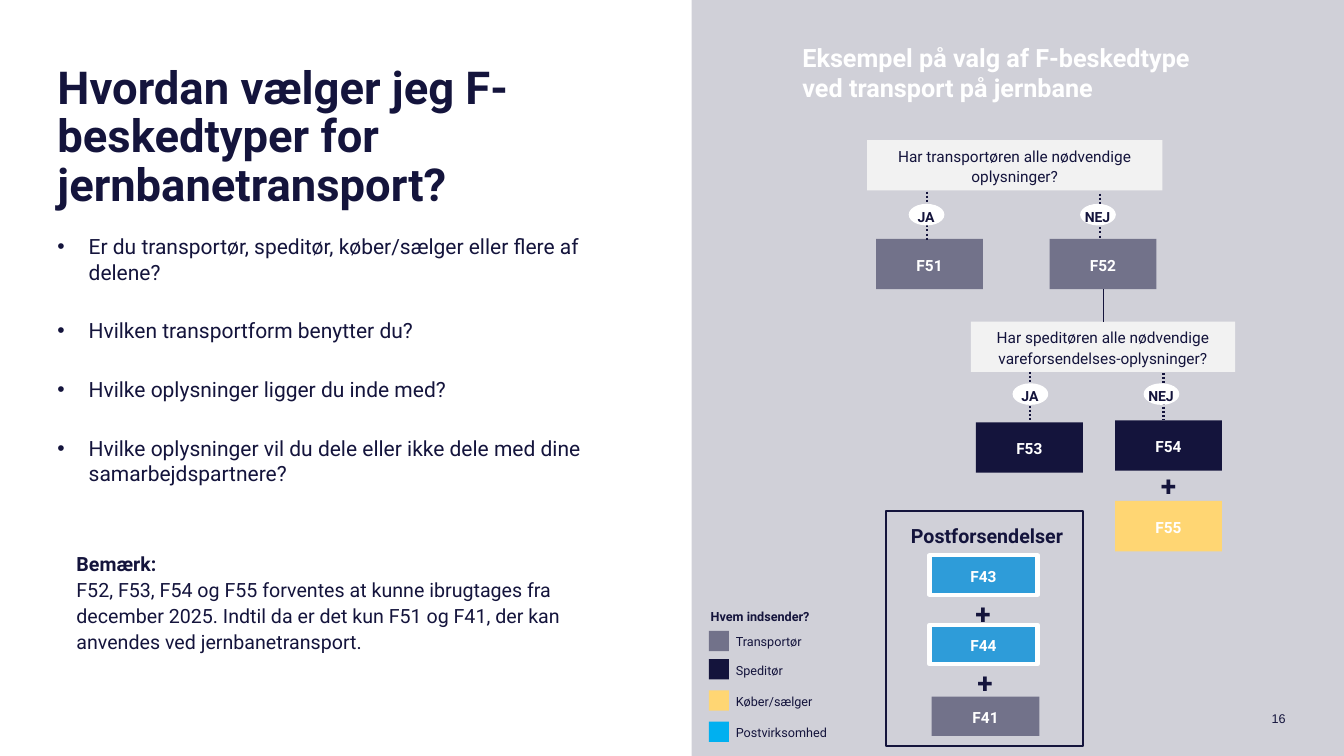
from pptx import Presentation
from pptx.util import Inches, Pt
from pptx.dml.color import RGBColor
from pptx.enum.dml import MSO_LINE
from pptx.enum.shapes import MSO_CONNECTOR, MSO_SHAPE
from pptx.enum.text import MSO_ANCHOR, PP_ALIGN
from lxml import etree

RECT, OVAL = MSO_SHAPE.RECTANGLE, MSO_SHAPE.OVAL
LINE, DOTS = MSO_CONNECTOR.STRAIGHT, MSO_LINE.ROUND_DOT
LEFT, MID, RIGHT = PP_ALIGN.LEFT, PP_ALIGN.CENTER, PP_ALIGN.RIGHT
TOP, CENTER, BOTTOM = MSO_ANCHOR.TOP, MSO_ANCHOR.MIDDLE, MSO_ANCHOR.BOTTOM
NAVY = RGBColor(0x14, 0x14, 0x3C)
SLATE = RGBColor(0x72, 0x72, 0x8A)
GOLD = RGBColor(0xFF, 0xD6, 0x73)
BLUE = RGBColor(0x2E, 0x9C, 0xD9)
CYAN = RGBColor(0x00, 0xB0, 0xF0)
PANEL = RGBColor(0xD0, 0xD0, 0xD8)
PALE = RGBColor(0xF2, 0xF2, 0xF2)
WHITE = RGBColor(0xFF, 0xFF, 0xFF)
A = "{http://schemas.openxmlformats.org/drawingml/2006/main}"

TITLE = "Hvordan vælger jeg F-beskedtyper for jernbanetransport?"
POINTS = [
    "Er du transportør, speditør, køber/sælger eller flere af delene?",
    "Hvilken transportform benytter du?",
    "Hvilke oplysninger ligger du inde med?",
    "Hvilke oplysninger vil du dele eller ikke dele med dine samarbejdspartnere?",
]
NOTE = [
    "Bemærk:",
    "F52, F53, F54 og F55 forventes at kunne ibrugtages fra december 2025. "
    "Indtil da er det kun F51 og F41, der kan anvendes ved jernbanetransport.",
]
HEAD = ["Eksempel på valg af F-beskedtype", "ved transport på jernbane"]
ASKS = [
    ("Har transportøren alle nødvendige oplysninger?", 8.6, 1.39, 2.93),
    ("Har speditøren alle nødvendige vareforsendelses-oplysninger?", 9.63, 3.19, 2.62),
]
TYPES = [
    ("F51", 8.69, 2.37, SLATE),
    ("F52", 10.41, 2.37, SLATE),
    ("F53", 9.68, 4.19, NAVY),
    ("F54", 11.06, 4.17, NAVY),
    ("F55", 11.06, 4.97, GOLD),
]
POST = [
    ("F43", 9.22, 5.51, BLUE, WHITE),
    ("F44", 9.22, 6.2, BLUE, WHITE),
    ("F41", 9.24, 6.91, SLATE, None),
]
PLUSES = [(11.34, 4.61), (9.5, 5.88), (9.52, 6.57)]
PATHS = [
    ("JA", 9.19, 1.9, 2.4, 2.03, 0.17),
    ("NEJ", 10.91, 1.92, 2.37, 2.03, 0.19),
    ("JA", 10.22, 3.69, 4.19, 3.81, 0.17),
    ("NEJ", 11.54, 3.7, 4.16, 3.81, 0.19),
]
LEGEND = [
    ("Transportør", 6.26, SLATE),
    ("Speditør", 6.54, NAVY),
    ("Køber/sælger", 6.85, GOLD),
    ("Postvirksomhed", 7.16, CYAN),
]

deck = Presentation()
deck.slide_width, deck.slide_height = Inches(13.33), Inches(7.5)
slide = deck.slides.add_slide(deck.slide_layouts[6])


def write(item, text, size=11, color=NAVY, bold=False, lead=False, align=LEFT,
          anchor=TOP, pad=True, space=1.11, after=0, bullet=False, font="Roboto"):
    frame = item.text_frame
    frame.word_wrap = True
    frame.vertical_anchor = anchor
    if not pad:
        frame.margin_left = frame.margin_right = 0
        frame.margin_top = frame.margin_bottom = 0
    lines = [text] if isinstance(text, str) else text
    for i, line in enumerate(lines):
        para = frame.paragraphs[0] if i == 0 else frame.add_paragraph()
        if bullet:
            props = para._p.get_or_add_pPr()
            props.set("marL", str(Inches(0.31)))
            props.set("indent", str(-Inches(0.31)))
            etree.SubElement(props, A + "buFont").set("typeface", "Arial")
            etree.SubElement(props, A + "buChar").set("char", "•")
        para.alignment = align
        para.line_spacing = space
        para.space_after = Pt(after)
        run = para.add_run()
        run.text = line
        run.font.name = font
        run.font.size = Pt(size)
        run.font.bold = bold or (lead and i == 0)
        run.font.color.rgb = color


def label(spot, text, **style):
    write(slide.shapes.add_textbox(*map(Inches, spot)), text, **style)


def shape(spot, fill=None, edge=None, width=1, kind=RECT):
    item = slide.shapes.add_shape(kind, *map(Inches, spot))
    item.shadow.inherit = False
    if fill is None:
        item.fill.background()
    else:
        item.fill.solid()
        item.fill.fore_color.rgb = fill
    if edge is None:
        item.line.fill.background()
    else:
        item.line.color.rgb = edge
        item.line.width = Pt(width)
    return item


def drop(x, top, end, width, dash=None):
    item = slide.shapes.add_connector(LINE, *map(Inches, (x, top, x, end)))
    item.line.color.rgb = NAVY
    item.line.width = Pt(width)
    if dash is not None:
        item.line.dash_style = dash
    etree.SubElement(item._element.spPr, A + "effectLst")


shape((6.86, 0, 6.47, 7.5), PANEL)
label((0.57, 0.65, 5.91, 0.57), TITLE, size=32.4, bold=True, pad=False, space=0.89)
label((0.57, 2.32, 5.9, 2.78), POINTS, size=15, pad=False, space=1, after=24,
      bullet=True)
label((0.66, 5.4, 5.73, 1.11), NOTE, size=14, lead=True)
label((7.86, 0.65, 4.35, 0.14), HEAD, size=18, color=WHITE, bold=True,
      anchor=CENTER, space=1)

for text, x, y, wide in ASKS:
    write(shape((x, y, wide, 0.5), PALE), text, align=MID, anchor=CENTER)

for text, x, y, fill in TYPES:
    write(shape((x, y, 1.06, 0.5), fill), text, color=WHITE, bold=True,
          align=MID, anchor=CENTER)

shape((8.79, 5.07, 1.95, 2.33), edge=NAVY, width=1.5)
label((8.98, 5.17, 1.62, 0.24), "Postforsendelser", size=14, bold=True,
      align=MID, pad=False)
for text, x, y, fill, edge in POST:
    write(shape((x, y, 1.07, 0.39), fill, edge, 3), text, color=WHITE, bold=True,
          align=MID, anchor=CENTER)

for x, y in PLUSES:
    label((x, y, 0.5, 0.34), "+", size=20, bold=True, align=MID, pad=False)

for text, x, top, end, y, shift in PATHS:
    drop(x, top, end, 1.5, DOTS)
    shape((x - shift, y, 0.34, 0.2), WHITE, WHITE, kind=OVAL)
    label((x - shift - 0.03, y + 0.02, 0.39, 0.12), text, size=10, bold=True,
          align=MID, pad=False)
drop(10.94, 2.87, 3.19, 0.5)

label((6.95, 5.96, 1.81, 0.29), "Hvem indsender?", size=9, bold=True, anchor=CENTER)
for text, y, fill in LEGEND:
    shape((7.03, y, 0.2, 0.2), fill)
    label((7.2, y - 0.04, 1.5, 0.28), text, size=9, anchor=CENTER)

label((11.05, 7.02, 1.7, 0.18), "16", size=9, align=RIGHT, anchor=BOTTOM,
      pad=False, space=1, font="Arial")

deck.save("out.pptx")
